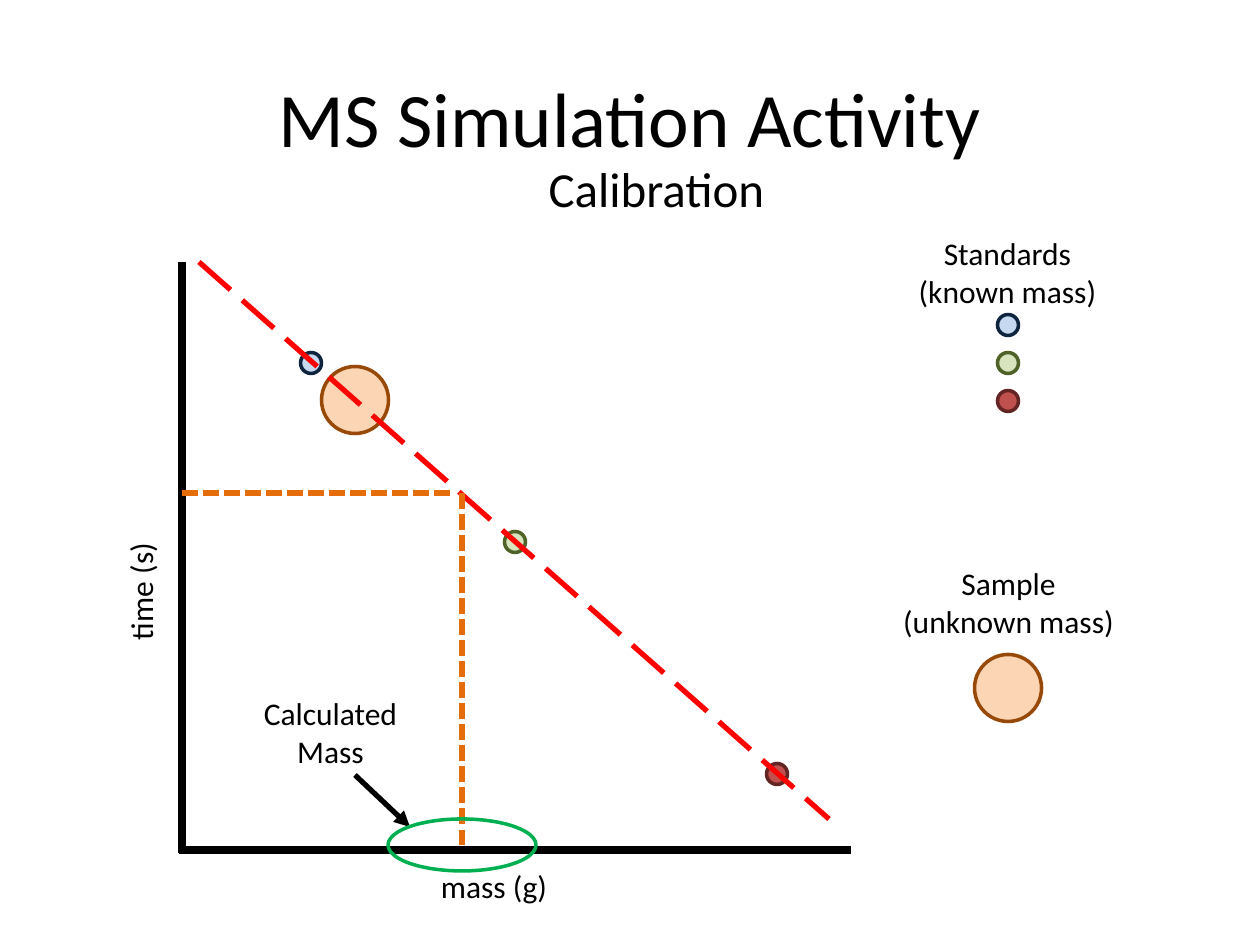
from pptx import Presentation
from pptx.dml.color import RGBColor as RGB
from pptx.enum.dml import MSO_LINE as Dash
from pptx.enum.shapes import MSO_CONNECTOR as Conn, MSO_SHAPE as Shape
from pptx.enum.text import MSO_ANCHOR as Anchor, PP_ALIGN as Align
from pptx.oxml.ns import qn
from pptx.util import Pt
from lxml.etree import SubElement as Sub

PX = 914400 / 126
COLORS = {
    "black": "000000",
    "trend": "FF0000",
    "guide": "E46C0A",
    "ring": "00B050",
    "blue": "C6D9F1",
    "navy": "0F243E",
    "green": "D7E4BD",
    "moss": "4F6228",
    "red": "C0504D",
    "wine": "632523",
    "peach": "FCD5B5",
    "brown": "984807",
}


def emu(*sizes):
    return [round(size * PX) for size in sizes]


def paint(name):
    return RGB.from_string(COLORS[name])


deck = Presentation()
deck.slide_width, deck.slide_height = emu(1260, 945)
slide = deck.slides.add_slide(deck.slide_layouts[6])
shapes = slide.shapes

balls = [
    (777, 774, 21, "red", "wine"),
    (515, 542, 21, "green", "moss"),
    (311, 363, 21, "blue", "navy"),
    (1008, 401, 21, "red", "wine"),
    (1008, 363, 21, "green", "moss"),
    (1008, 325, 21, "blue", "navy"),
    (1008, 688, 67, "peach", "brown"),
    (355, 400, 67, "peach", "brown"),
]
for x, y, size, fill, edge in balls:
    ball = shapes.add_shape(
        Shape.OVAL, *emu(x - size / 2, y - size / 2, size, size)
    )
    ball.shadow.inherit = False
    ball.fill.solid()
    ball.fill.fore_color.rgb = paint(fill)
    ball.line.color.rgb = paint(edge)
    ball.line.width = Pt(2)

lines = [
    (182, 262, 182, 853, "black", 4.5, None),
    (851, 850, 179, 850, "black", 4.5, None),
    (199, 262, 829, 819, "trend", 3, Dash.LONG_DASH),
    (182, 493, 451, 493, "guide", 3, Dash.SQUARE_DOT),
    (462, 493, 462, 850, "guide", 3, Dash.SQUARE_DOT),
    (355, 775, 410, 827, "black", 3, None),
]
for *ends, color, width, dash in lines:
    line = shapes.add_connector(Conn.STRAIGHT, *emu(*ends))
    line.line.color.rgb = paint(color)
    line.line.width = Pt(width)
    if dash:
        line.line.dash_style = dash
    Sub(line._element.spPr, qn("a:effectLst"))
Sub(line.line._get_or_add_ln(), qn("a:tailEnd"), type="triangle")

ring = shapes.add_shape(Shape.OVAL, *emu(388, 819, 148, 52))
ring.shadow.inherit = False
ring.fill.background()
ring.line.color.rgb = paint("ring")
ring.line.width = Pt(2)

labels = [
    (63, 38, 1134, 158, "MS Simulation Activity", 44, 0),
    (494, 152, 325, 72, "Calibration", 28, 0),
    (305, 861, 378, 51, "mass (g)", 18, 0),
    (-48, 566, 378, 51, "time (s)", 18, 270),
    (897, 228, 221, 89, "Standards\n(known mass)", 18, 0),
    (887, 558, 243, 89, "Sample\n(unknown mass)", 18, 0),
    (231, 688, 199, 89, "Calculated Mass", 18, 0),
]
for *area, text, size, turn in labels:
    label = shapes.add_textbox(*emu(*area))
    label.rotation = turn
    frame = label.text_frame
    frame.word_wrap = True
    frame.vertical_anchor = Anchor.MIDDLE if size == 44 else Anchor.TOP
    frame.text = text
    for par in frame.paragraphs:
        par.alignment = Align.CENTER
        par.font.name = "Calibri"
        par.font.size = Pt(size)
        par.font.color.rgb = paint("black")

deck.save("out.pptx")
